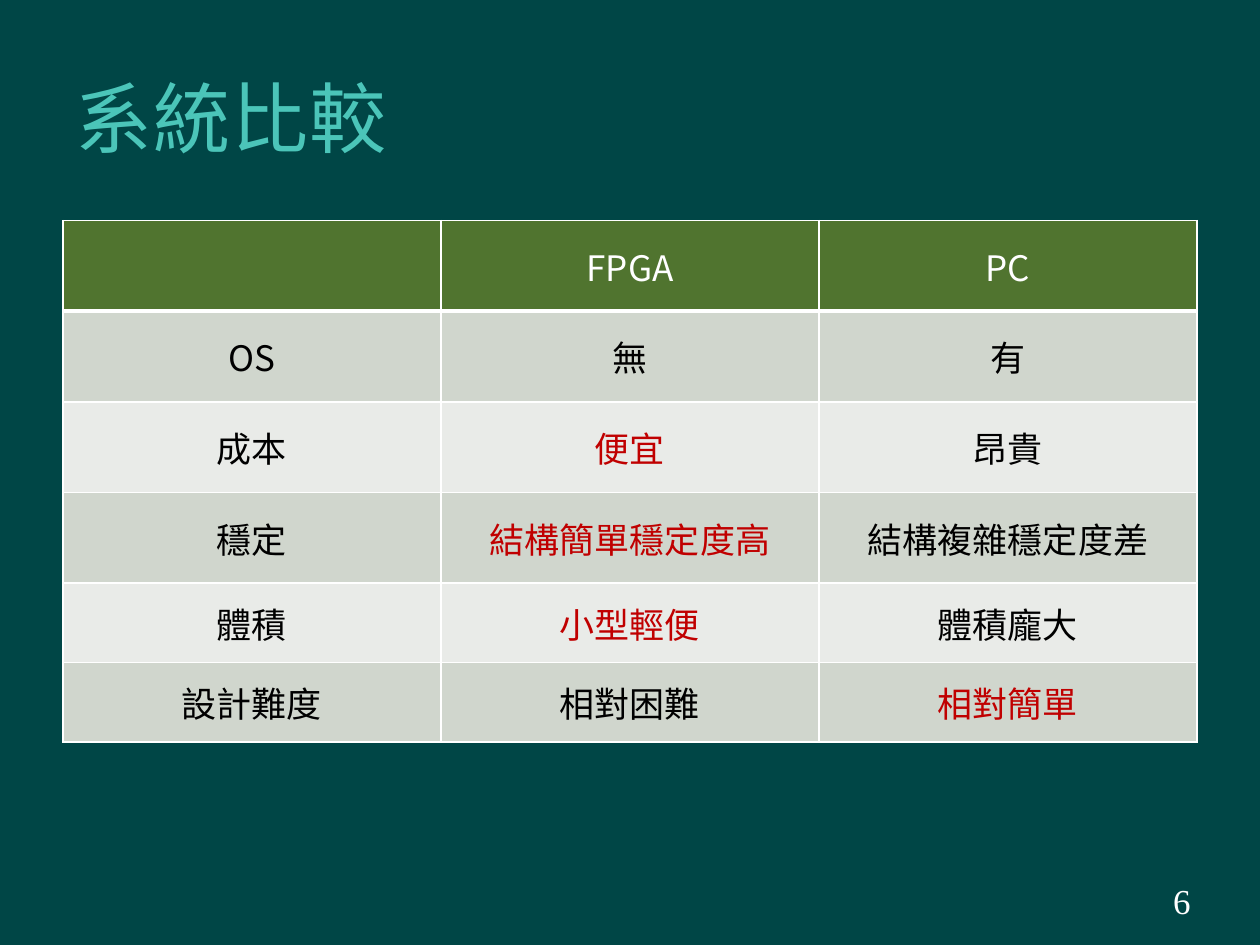
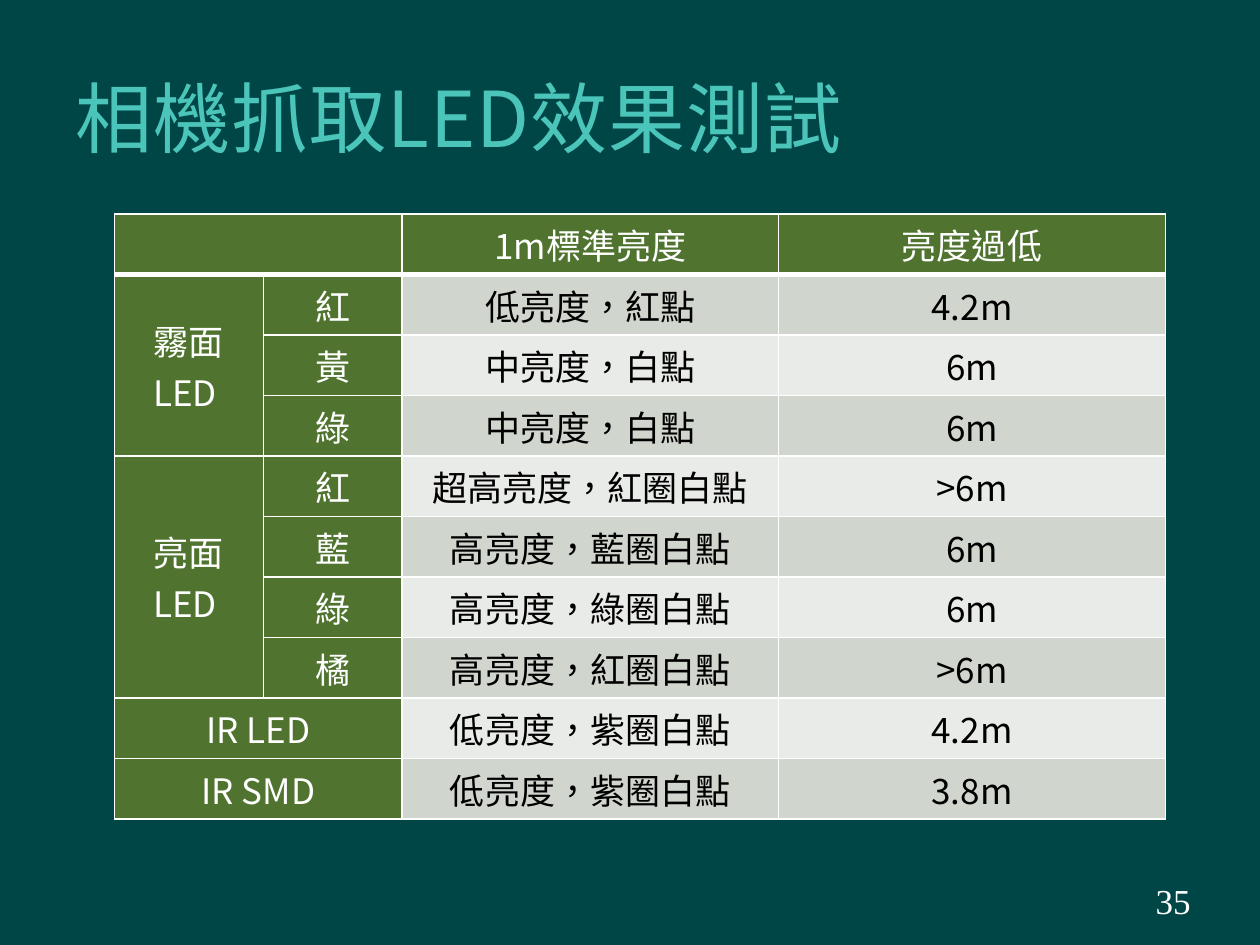
"""Build two comparison-table slides in a shared dark teal style."""
from lxml import etree
from pptx import Presentation
from pptx import util as u
from pptx.dml.color import RGBColor
from pptx.enum import text
from pptx.oxml import ns

TEAL_DARK = RGBColor(0x00, 0x46, 0x46)
TEAL_LIGHT = RGBColor(0x4B, 0xC5, 0xB9)
GREEN = RGBColor(0x50, 0x74, 0x2F)
BAND_DARK = RGBColor(0xD0, 0xD6, 0xCD)
BAND_LIGHT = RGBColor(0xE9, 0xEB, 0xE8)
WHITE = RGBColor(0xFF, 0xFF, 0xFF)
BLACK = RGBColor(0x00, 0x00, 0x00)
RED = RGBColor(0xC0, 0x00, 0x00)
SANS = "Noto Sans CJK SC"
SERIF = "Times New Roman"
LANGUAGE = "zh-TW"
TITLE_ONLY = 5


class Deck:
    def __init__(self):
        self.presentation = Presentation()
        self.presentation.slide_width = u.Inches(10)
        self.presentation.slide_height = u.Inches(7.5)
        fill = self.presentation.slide_master.background.fill
        fill.solid()
        fill.fore_color.rgb = TEAL_DARK
        self.slide = None

    def style(self, paragraph, size, color, font=SANS, align=text.PP_ALIGN.CENTER):
        paragraph.alignment = align
        for run in paragraph.runs:
            run.font.size = u.Pt(size)
            run.font.bold = False
            run.font.color.rgb = color
            run.font.name = font
            run.font._element.set("lang", LANGUAGE)
            east_asian = etree.SubElement(run.font._element, ns.qn("a:ea"))
            east_asian.set("typeface", font)

    def add_slide(self, title, number):
        layout = self.presentation.slide_layouts[TITLE_ONLY]
        self.slide = self.presentation.slides.add_slide(layout)
        self.add_title(title)
        self.add_number(number)

    def add_title(self, title):
        shape = self.slide.shapes.title
        shape.left, shape.top = u.Inches(0.5), u.Inches(0.3)
        shape.width, shape.height = u.Inches(8.5), u.Inches(1.25)
        frame = shape.text_frame
        frame.text = title
        frame.auto_size = text.MSO_AUTO_SIZE.NONE
        frame.vertical_anchor = text.MSO_ANCHOR.MIDDLE
        paragraph = frame.paragraphs[0]
        self.style(paragraph, 44, TEAL_LIGHT, align=text.PP_ALIGN.LEFT)
        paragraph.runs[0].font._element.set("spc", "50")

    def add_number(self, number):
        shape = self.slide.shapes.add_textbox(
            u.Inches(7.17), u.Inches(6.95), u.Inches(2.33), u.Inches(0.4))
        frame = shape.text_frame
        frame.word_wrap = True
        frame.vertical_anchor = text.MSO_ANCHOR.MIDDLE
        frame.margin_left = frame.margin_right = u.Inches(0.05)
        frame.text = str(number)
        self.style(frame.paragraphs[0], 20, WHITE, SERIF, text.PP_ALIGN.RIGHT)

    def add_borders(self, cell, row):
        properties = cell._tc.get_or_add_tcPr()
        widths = {"L": 1, "R": 1, "T": 3 if row == 1 else 1, "B": 3 if row == 0 else 1}
        for side, width in widths.items():
            line = etree.SubElement(
                properties, ns.qn(f"a:ln{side}"), w=str(u.Pt(width)))
            fill = etree.SubElement(line, ns.qn("a:solidFill"))
            etree.SubElement(fill, ns.qn("a:srgbClr"), val=str(WHITE))

    def add_table(self, left, top, widths, heights, rows, label_columns=0,
                  merges=(), highlights=(), margins=None):
        table = self.slide.shapes.add_table(
            len(rows), len(widths), u.Inches(left), u.Inches(top),
            u.Inches(sum(widths)), u.Inches(sum(heights))).table
        table.first_row = table.horz_banding = False
        for column, width in zip(table.columns, widths):
            column.width = u.Inches(width)
        for table_row, height in zip(table.rows, heights):
            table_row.height = u.Inches(height)
        for first, last in merges:
            table.cell(*first).merge(table.cell(*last))
        for row, values in enumerate(rows):
            for column, value in enumerate(values):
                cell = table.cell(row, column)
                heading = row == 0 or column < label_columns
                self.add_borders(cell, row)
                cell.fill.solid()
                band = BAND_DARK if row % 2 else BAND_LIGHT
                cell.fill.fore_color.rgb = GREEN if heading else band
                cell.vertical_anchor = text.MSO_ANCHOR.MIDDLE
                if margins:
                    side, end = margins
                    cell.margin_left = cell.margin_right = u.Inches(side)
                    cell.margin_top = cell.margin_bottom = u.Inches(end)
                if value:
                    cell.text_frame.text = value
                    body = RED if (row, column) in highlights else BLACK
                    self.style(cell.text_frame.paragraphs[0], 20,
                               WHITE if heading else body)


def main():
    deck = Deck()

    deck.add_slide("系統比較", 6)
    deck.add_table(
        0.5, 1.75, [3] * 3, [0.72] * 4 + [0.63] * 2,
        [["", "FPGA", "PC"],
         ["OS", "無", "有"],
         ["成本", "便宜", "昂貴"],
         ["穩定", "結構簡單穩定度高", "結構複雜穩定度差"],
         ["體積", "小型輕便", "體積龐大"],
         ["設計難度", "相對困難", "相對簡單"]],
        highlights={(2, 1), (3, 1), (4, 1), (5, 2)})

    deck.add_slide("相機抓取LED效果測試", 35)
    deck.add_table(
        0.91, 1.7, [1.18, 1.1, 2.99, 3.07], [0.48] * 10,
        [["", "", "1m標準亮度", "亮度過低"],
         ["霧面LED ", "紅", "低亮度，紅點", "4.2m"],
         ["", "黃", "中亮度，白點", "6m"],
         ["", "綠", "中亮度，白點", "6m"],
         ["亮面LED ", "紅", "超高亮度，紅圈白點", ">6m"],
         ["", "藍", "高亮度，藍圈白點", "6m"],
         ["", "綠", "高亮度，綠圈白點", "6m"],
         ["", "橘", "高亮度，紅圈白點", ">6m"],
         ["IR LED", "", "低亮度，紫圈白點", "4.2m"],
         ["IR SMD", "", "低亮度，紫圈白點", "3.8m"]],
        label_columns=2,
        merges=[((0, 0), (0, 1)), ((1, 0), (3, 0)), ((4, 0), (7, 0)),
                ((8, 0), (8, 1)), ((9, 0), (9, 1))],
        margins=(0.07, 0))

    deck.presentation.save("out.pptx")


if __name__ == "__main__":
    main()
